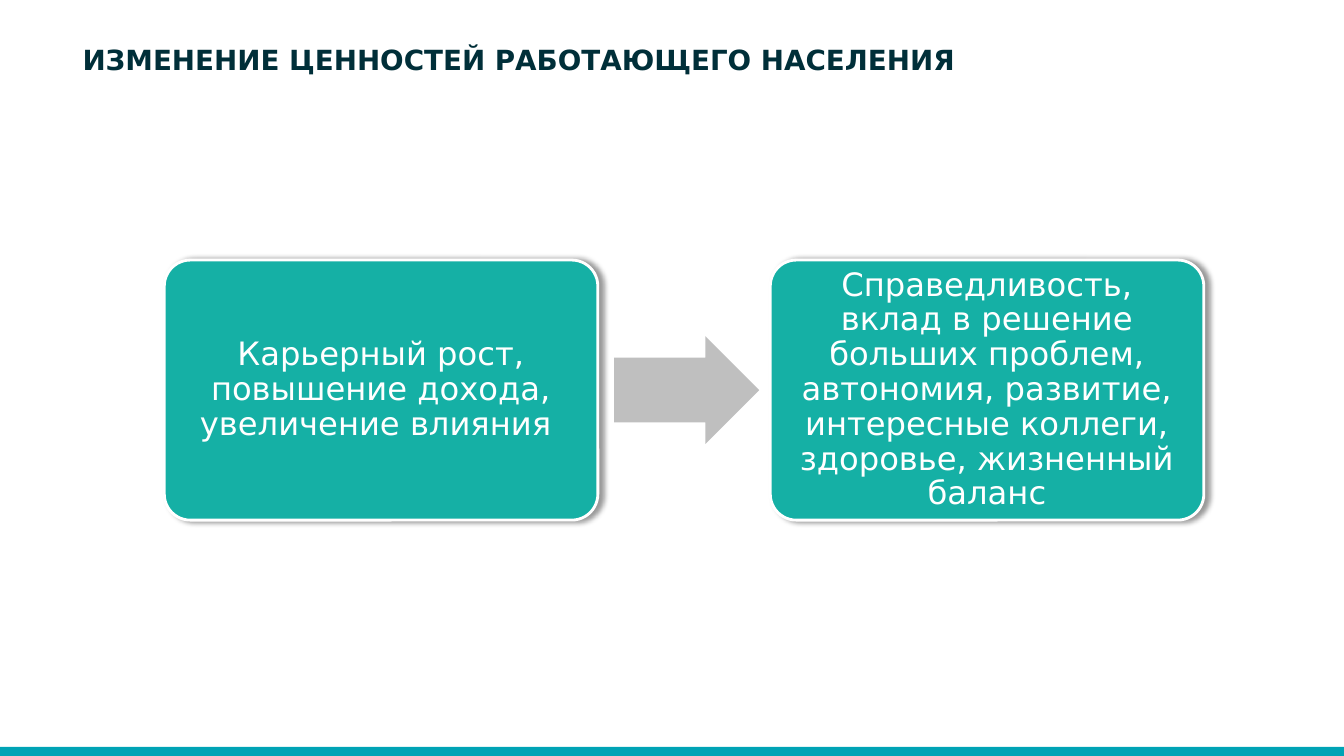
from lxml import etree
from pptx import Presentation
from pptx.dml.color import RGBColor
from pptx.enum.shapes import MSO_SHAPE as Shape
from pptx.enum.text import MSO_ANCHOR as Anchor, PP_ALIGN as Align
from pptx.oxml.ns import qn
from pptx.util import Inches, Pt

TITLE = "ИЗМЕНЕНИЕ ЦЕННОСТЕЙ РАБОТАЮЩЕГО НАСЕЛЕНИЯ"
VALUES = [
    "Карьерный рост, повышение дохода, увеличение влияния ",
    "Справедливость, вклад в решение больших проблем, автономия, развитие, "
    "интересные коллеги, здоровье, жизненный баланс",
]
COLORS = {"title": "002F39", "footer": "00A3B5", "card": "15B0A5",
          "arrow": "BFBFBF", "white": "FFFFFF", "shadow": "000000"}
FONT = "DejaVu Sans"
SLIDE_W, SLIDE_H = 13.33, 7.5
FOOTER_H = 0.09
CARD_W, CARD_H = 4.3, 2.58
CARD_LEFT, CARD_TOP, CARD_STEP = 1.63, 2.58, 6.01
ARROW_W, ARROW_H = 1.44, 1.07
ARROW_GAP = 0.16


def color(name):
    return RGBColor.from_string(COLORS[name])


def add_block(slide, preset, fill, left, top, width, height):
    block = slide.shapes.add_shape(
        preset, Inches(left), Inches(top), Inches(width), Inches(height))
    block.shadow.inherit = False
    block.fill.solid()
    block.fill.fore_color.rgb = color(fill)
    block.line.fill.background()
    return block


def write(frame, text, size, ink, bold=False):
    frame.word_wrap = True
    paragraph = frame.paragraphs[0]
    paragraph.text = text
    font = paragraph.font
    font.name, font.size, font.bold = FONT, Pt(size), bold
    font.color.rgb = color(ink)
    return paragraph


def cast_shadow(block):
    effects = block._element.spPr.find(qn("a:effectLst"))
    shadow = etree.SubElement(effects, qn("a:outerShdw"), blurRad=str(Pt(4)),
                              dist=str(Pt(3)), dir="0", rotWithShape="0")
    tint = etree.SubElement(shadow, qn("a:srgbClr"), val=COLORS["shadow"])
    etree.SubElement(tint, qn("a:alpha"), val="40000")


def add_card(slide, left, text):
    card = add_block(slide, Shape.ROUNDED_RECTANGLE, "card",
                     left, CARD_TOP, CARD_W, CARD_H)
    card.adjustments[0] = 0.1
    card.line.color.rgb = color("white")
    card.line.width = Pt(2)
    cast_shadow(card)
    frame = card.text_frame
    frame.vertical_anchor = Anchor.MIDDLE
    frame.margin_left = frame.margin_right = Inches(0.1)
    frame.margin_top = frame.margin_bottom = Inches(0.1)
    paragraph = write(frame, text, 23, "white")
    paragraph.alignment = Align.CENTER
    paragraph.line_spacing = 0.9


def main():
    deck = Presentation()
    deck.slide_width, deck.slide_height = Inches(SLIDE_W), Inches(SLIDE_H)
    slide = deck.slides.add_slide(deck.slide_layouts[6])

    title = slide.shapes.add_textbox(
        Inches(0.72), Inches(0.38), Inches(9.81), Inches(0.33))
    write(title.text_frame, TITLE, 19.8, "title", bold=True)

    add_block(slide, Shape.RECTANGLE, "footer",
              0, SLIDE_H - FOOTER_H, SLIDE_W, FOOTER_H)

    for column, text in enumerate(VALUES):
        add_card(slide, CARD_LEFT + column * CARD_STEP, text)

    arrow = add_block(slide, Shape.RIGHT_ARROW, "arrow",
                      CARD_LEFT + CARD_W + ARROW_GAP,
                      CARD_TOP + (CARD_H - ARROW_H) / 2, ARROW_W, ARROW_H)
    arrow.adjustments[0] = 0.6
    arrow.adjustments[1] = 0.5

    deck.save("out.pptx")


if __name__ == "__main__":
    main()
